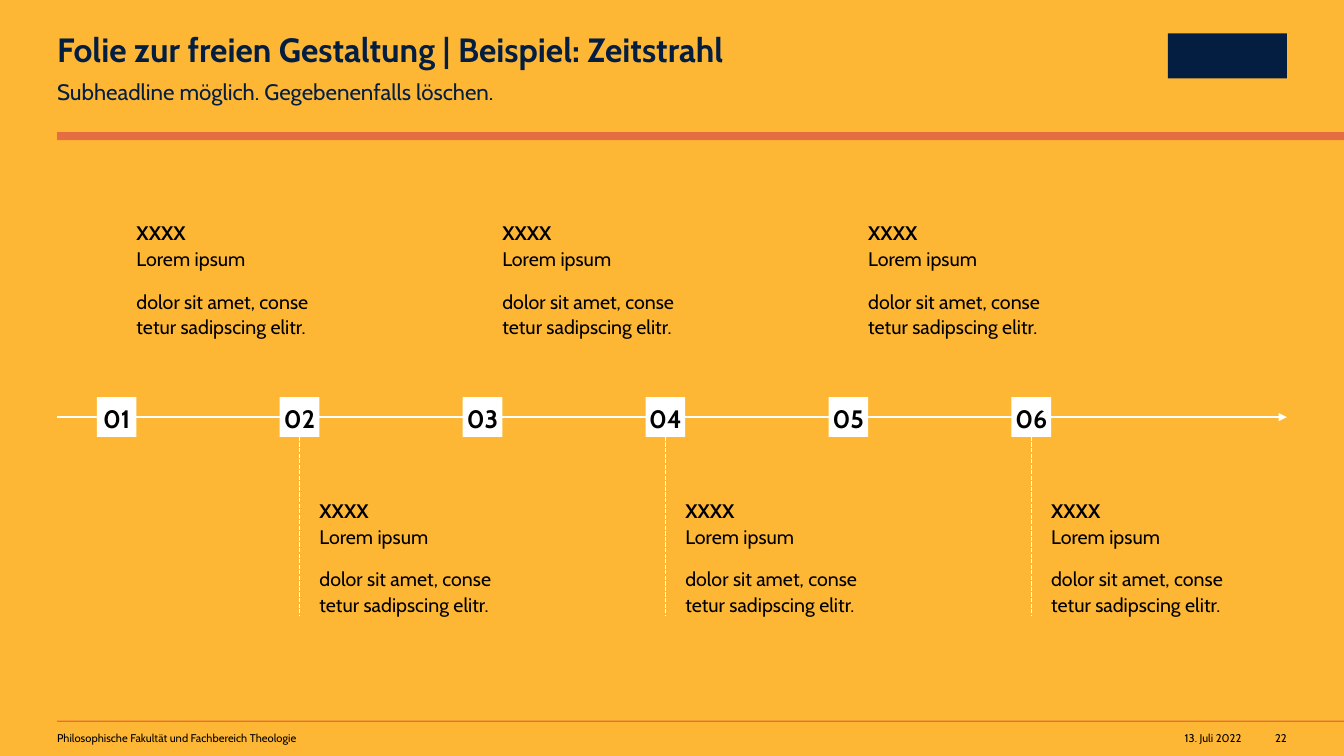
import pptx
import pptx.dml.color
import pptx.enum.dml
import pptx.enum.shapes
import pptx.enum.text
import pptx.oxml.ns
import pptx.util
import lxml.etree

Cm = pptx.util.Cm
Pt = pptx.util.Pt
ALIGN = pptx.enum.text.PP_ALIGN
ANCHOR = pptx.enum.text.MSO_ANCHOR

YELLOW, ORANGE, NAVY = "FDB735", "E46D41", "041E42"
WHITE, BLACK = "FFFFFF", "000000"
SLIDE_WIDTH, SLIDE_HEIGHT = 33.87, 19.05
MARGIN = 1.44
CONTENT_WIDTH = SLIDE_WIDTH - 2 * MARGIN


def colour(value):
    return pptx.dml.color.RGBColor.from_string(value)


def add_block(page, box, fill):
    block = page.shapes.add_shape(
        pptx.enum.shapes.MSO_SHAPE.RECTANGLE, *map(Cm, box))
    block.shadow.inherit = False
    block.fill.solid()
    block.fill.fore_color.rgb = colour(fill)
    block.line.fill.background()
    return block


def add_line(page, start, end):
    line = page.shapes.add_connector(
        pptx.enum.shapes.MSO_CONNECTOR.STRAIGHT, *map(Cm, start + end))
    line.line.color.rgb = colour(WHITE)
    line.line.width = Pt(1)
    lxml.etree.SubElement(line._element.spPr, pptx.oxml.ns.qn("a:effectLst"))
    return line


def prepare_frame(frame, anchor=ANCHOR.TOP):
    frame.word_wrap = True
    frame.vertical_anchor = anchor
    frame.margin_left = frame.margin_right = 0
    frame.margin_top = frame.margin_bottom = 0


def style(para, size, text_colour=BLACK, bold=False, align=ALIGN.LEFT,
          spacing=1.0, after=0):
    para.alignment = align
    para.line_spacing = spacing
    para.space_after = Pt(after)
    para.font.name = "Cabin"
    para.font.size = Pt(size)
    para.font.bold = bold
    para.font.color.rgb = colour(text_colour)


def add_text(page, box, text, size, **options):
    frame = page.shapes.add_textbox(*map(Cm, box)).text_frame
    prepare_frame(frame)
    para = frame.paragraphs[0]
    para.text = text
    style(para, size, **options)


def add_header(page, box, title, subtitle):
    left, top, width, height = box
    add_text(page, (left, top + 0.84, 19.02, 0.91), title, 24,
             text_colour=NAVY, bold=True, spacing=0.9)
    add_text(page, (left, top + 1.9, 19.02, 0.69), subtitle, 16,
             text_colour=NAVY, spacing=1.1, after=12)
    add_block(page, (left + width - 3, top + 0.84, 3, 1.14), NAVY)
    add_block(page, (left, top + height - 0.2, SLIDE_WIDTH - left, 0.2), ORANGE)


def add_footer(page, box, faculty, date, number):
    left, top, width, height = box
    add_block(page, (left, top, SLIDE_WIDTH - left, 0.03), ORANGE)
    text_top = top + 0.28
    add_text(page, (left, text_top, 15.2, 0.33), faculty, 8)
    right = left + width
    add_text(page, (right - 4.14, text_top, 3, 0.33), date, 8,
             align=ALIGN.RIGHT)
    add_text(page, (right - 1, text_top, 1, 0.33), number, 8,
             align=ALIGN.RIGHT)


def add_event(page, box, heading, place, detail):
    frame = page.shapes.add_textbox(*map(Cm, box)).text_frame
    prepare_frame(frame)
    first = frame.paragraphs[0]
    span = first.add_run()
    span.text = heading
    span.font.bold = True
    first.add_line_break()
    first.add_run().text = place
    second = frame.add_paragraph()
    second.text = detail
    for para in frame.paragraphs:
        style(para, 14, spacing=1.1, after=12)


def add_timeline(page, box, events):
    left, top, width, height = box
    axis = top + height / 2
    arrow = add_line(page, (left, axis), (left + width, axis))
    lxml.etree.SubElement(arrow.line._get_or_add_ln(),
                          pptx.oxml.ns.qn("a:tailEnd"), type="triangle")
    side, step = 1, 4.61
    for index, event in enumerate(events):
        marker_left = left + 1 + index * step
        marker = add_block(page, (marker_left, axis - side / 2, side, side),
                           WHITE)
        prepare_frame(marker.text_frame, ANCHOR.MIDDLE)
        para = marker.text_frame.paragraphs[0]
        para.text = f"{index + 1:02d}"
        style(para, 18, bold=True, align=ALIGN.CENTER, spacing=1.1, after=12)
        below = index % 2 == 1
        if below:
            middle = marker_left + side / 2
            stem = add_line(page, (middle, axis + side / 2),
                            (middle, top + height))
            stem.line.dash_style = pptx.enum.dml.MSO_LINE.SQUARE_DOT
        event_top = top + height - 3 if below else top
        add_event(page, (marker_left + side, event_top, 4.95, 3), *event)


def main():
    deck = pptx.Presentation()
    deck.slide_width, deck.slide_height = Cm(SLIDE_WIDTH), Cm(SLIDE_HEIGHT)
    page = deck.slides.add_slide(deck.slide_layouts[6])
    page.background.fill.solid()
    page.background.fill.fore_color.rgb = colour(YELLOW)
    add_header(page, (MARGIN, 0, CONTENT_WIDTH, 3.53),
               "Folie zur freien Gestaltung | Beispiel: Zeitstrahl",
               "Subheadline möglich. Gegebenenfalls löschen.")
    event = ("XXXX", "Lorem ipsum",
             "dolor sit amet, conse\vtetur sadipscing elitr.")
    add_timeline(page, (MARGIN, 5.51, CONTENT_WIDTH, 10), [event] * 6)
    add_footer(page, (MARGIN, 18.16, CONTENT_WIDTH, 0.89),
               "Philosophische Fakultät und Fachbereich Theologie",
               "13. Juli 2022", "22")
    deck.save("out.pptx")


if __name__ == "__main__":
    main()
